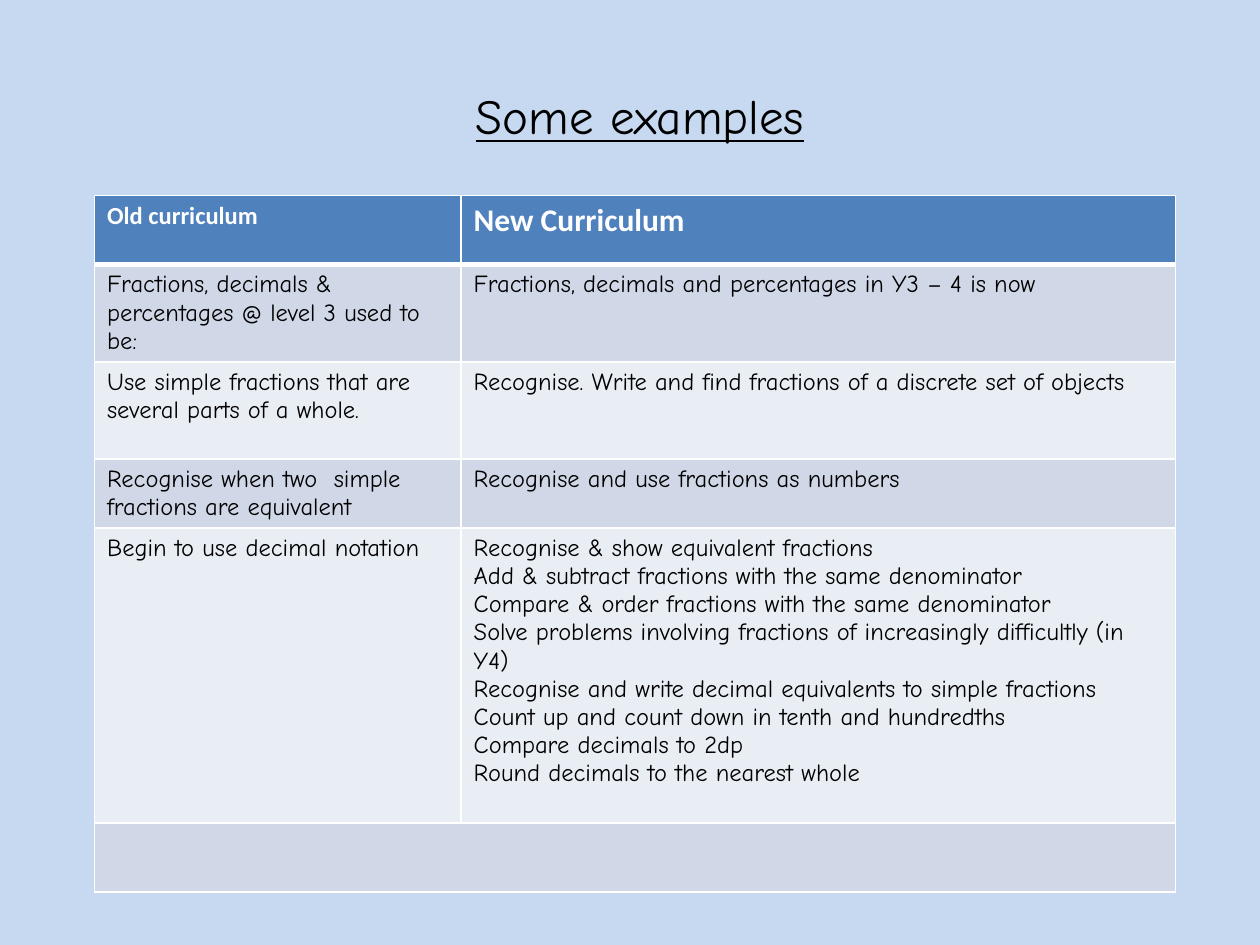
from dataclasses import dataclass

from lxml import etree
from pptx import Presentation
from pptx import util as u
from pptx.dml.color import RGBColor
from pptx.enum import text
from pptx.oxml import ns


@dataclass(frozen=True)
class Theme:
    background: str = "C6D9F1"
    ink: str = "000000"
    white: str = "FFFFFF"
    header: str = "4F81BD"
    bands: tuple = ("D0D8E8", "E9EDF4")
    heading_font: str = "Calibri"
    body_font: str = "Comic Neue"
    title_size: int = 28
    header_sizes: tuple = (14, 18)
    body_size: int = 14
    border: float = 1
    header_border: float = 3


class SlideBuilder:
    def __init__(self, slide, theme):
        self.slide = slide
        self.theme = theme

    def background(self):
        fill = self.slide.background.fill
        fill.solid()
        fill.fore_color.rgb = RGBColor.from_string(self.theme.background)

    def style(self, paragraph, name, size, color, bold=False):
        font = paragraph.font
        font.name = name
        font.size = u.Pt(size)
        font.bold = bold
        font.color.rgb = RGBColor.from_string(color)

    def title(self, wording, left, top, width, height):
        shape = self.slide.shapes.title
        shape.left, shape.top = u.Inches(left), u.Inches(top)
        shape.width, shape.height = u.Inches(width), u.Inches(height)
        frame = shape.text_frame
        frame.text = wording
        frame.vertical_anchor = text.MSO_ANCHOR.MIDDLE
        paragraph = frame.paragraphs[0]
        paragraph.alignment = text.PP_ALIGN.CENTER
        self.style(paragraph, self.theme.body_font, self.theme.title_size, self.theme.ink)
        paragraph.font.underline = True

    def borders(self, cell, top, bottom):
        properties = cell._tc.get_or_add_tcPr()
        widths = {"L": self.theme.border, "R": self.theme.border, "T": top, "B": bottom}
        for side, width in widths.items():
            line = etree.SubElement(properties, ns.qn(f"a:ln{side}"), w=str(u.Pt(width)))
            fill = etree.SubElement(line, ns.qn("a:solidFill"))
            etree.SubElement(fill, ns.qn("a:srgbClr"), val=self.theme.white)

    def cell(self, cell, wording, row, column):
        theme = self.theme
        is_header = row == 0
        self.borders(
            cell,
            theme.header_border if row == 1 else theme.border,
            theme.header_border if is_header else theme.border,
        )
        cell.fill.solid()
        color = theme.header if is_header else theme.bands[(row - 1) % 2]
        cell.fill.fore_color.rgb = RGBColor.from_string(color)
        cell.text = wording
        for paragraph in cell.text_frame.paragraphs:
            if is_header:
                size = theme.header_sizes[column]
                self.style(paragraph, theme.heading_font, size, theme.white, True)
            else:
                self.style(paragraph, theme.body_font, theme.body_size, theme.ink)

    def table(self, rows, left, top, widths, heights):
        frame = self.slide.shapes.add_table(
            len(rows), len(widths), u.Inches(left), u.Inches(top),
            u.Inches(sum(widths)), u.Inches(sum(heights)),
        )
        table = frame.table
        for column, width in zip(table.columns, widths):
            column.width = u.Inches(width)
        for row, height in zip(table.rows, heights):
            row.height = u.Inches(height)
        for row_index, row in enumerate(rows):
            for column_index, wording in enumerate(row):
                self.cell(table.cell(row_index, column_index), wording, row_index, column_index)
        return table


CURRICULUM = [
    ("Old curriculum", "New Curriculum"),
    (
        "Fractions, decimals & percentages @ level 3 used to be:",
        "Fractions, decimals and percentages in Y3 – 4 is now",
    ),
    (
        "Use simple fractions that are several parts of a whole.",
        "Recognise. Write and find fractions of a discrete set of objects",
    ),
    (
        "Recognise when two  simple fractions are equivalent",
        "Recognise and use fractions as numbers",
    ),
    (
        "Begin to use decimal notation",
        "\n".join([
            "Recognise & show equivalent fractions",
            "Add & subtract fractions with the same denominator",
            "Compare & order fractions with the same denominator",
            "Solve problems involving fractions of increasingly difficultly (in Y4)",
            "Recognise and write decimal equivalents to simple fractions",
            "Count up and count down in tenth and hundredths",
            "Compare decimals to 2dp",
            "Round decimals to the nearest whole",
        ]),
    ),
    ("", ""),
]


def main():
    presentation = Presentation()
    presentation.slide_width = u.Inches(10)
    presentation.slide_height = u.Inches(7.5)
    title_only = presentation.slide_layouts[5]
    builder = SlideBuilder(presentation.slides.add_slide(title_only), Theme())
    builder.background()
    builder.title("Some examples", 0.91, 0.6, 8.34, 0.63)
    table = builder.table(
        CURRICULUM, 0.75, 1.55, (2.91, 5.67), (0.55, 0.77, 0.77, 0.55, 2.34, 0.55)
    )
    last_row = len(CURRICULUM) - 1
    table.cell(last_row, 0).merge(table.cell(last_row, 1))
    presentation.save("out.pptx")


if __name__ == "__main__":
    main()
